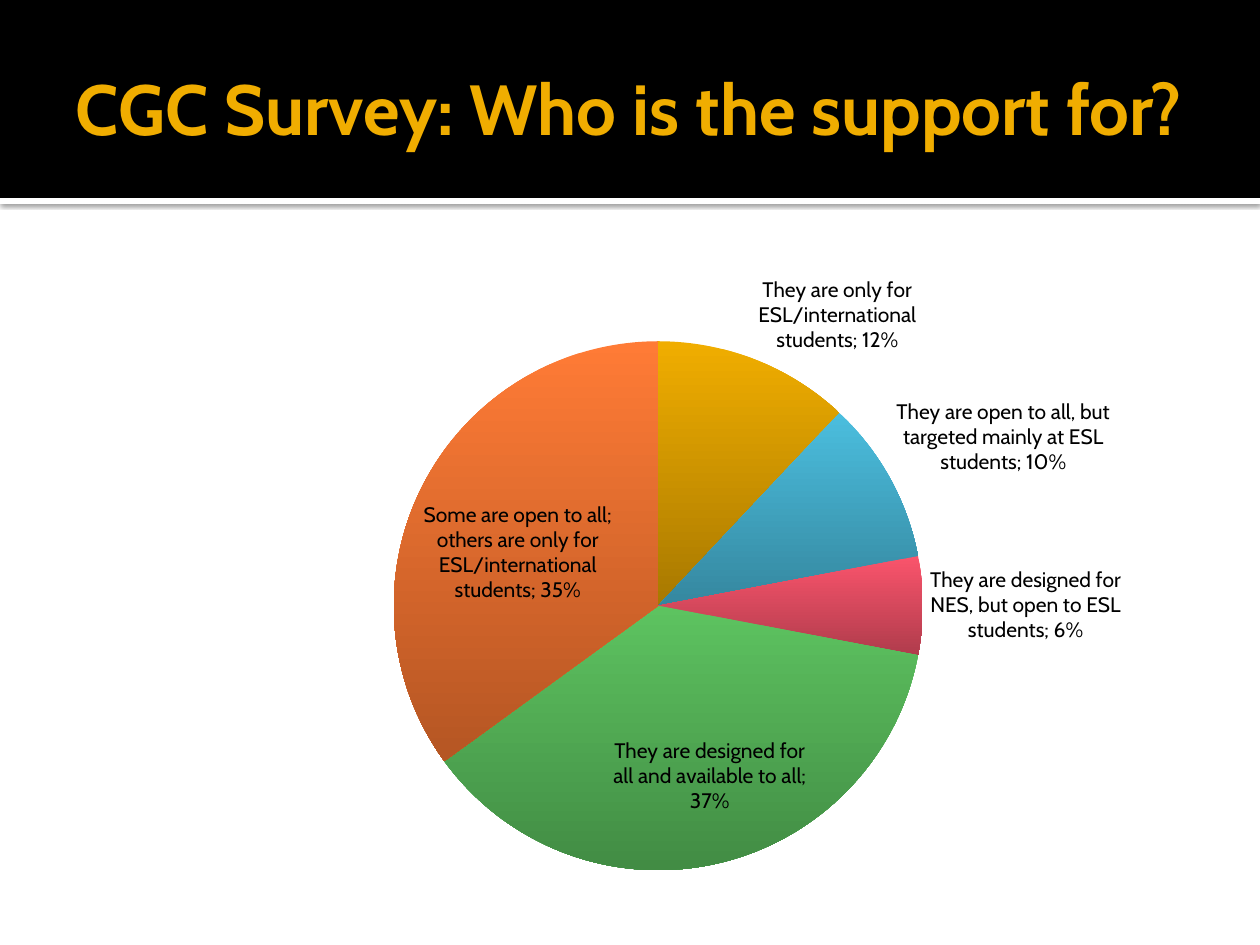
from lxml import etree
from pptx import Presentation
from pptx.chart.data import CategoryChartData
from pptx.dml.color import RGBColor
from pptx.enum.chart import XL_CHART_TYPE, XL_LABEL_POSITION
from pptx.enum.shapes import MSO_SHAPE
from pptx.enum.text import MSO_ANCHOR, MSO_AUTO_SIZE, PP_ALIGN
from pptx.oxml import parse_xml
from pptx.oxml.ns import nsdecls, qn
from pptx.util import Pt

PIE = XL_CHART_TYPE.PIE
OUT, MID = XL_LABEL_POSITION.OUTSIDE_END, XL_LABEL_POSITION.CENTER
RECT = MSO_SHAPE.RECTANGLE
FONT = "Cabin"
SCALE = 914400 / 126

# answer, share, top colour, bottom colour, label place, label shift
SLICES = [
    ("They are only for ESL/international students",
     0.12, "F0AD00", "A87900", OUT, None),
    ("They are open to all, but targeted mainly at ESL students",
     0.10, "4BBEDE", "35879F", OUT, None),
    ("They are designed for NES, but open to ESL students",
     0.06, "FA546C", "B03C4C", OUT, None),
    ("They are designed for all and available to all",
     0.37, "5DC360", "428C44", MID, (0.02, 0.06)),
    ("Some are open to all; others are only for ESL/international students",
     0.35, "FF7B36", "B55623", MID, (-0.02, 0.01)),
]


def px(n):
    return round(n * SCALE)


def rgb(code):
    return RGBColor.from_string(code)


def style(font, size, color, bold=False):
    font.name, font.size, font.bold = FONT, Pt(size), bold
    font.color.rgb = rgb(color)


def add_band(slide, top, height, color):
    band = slide.shapes.add_shape(RECT, 0, px(top), px(1260), px(height))
    band.shadow.inherit = False
    band.fill.solid()
    band.fill.fore_color.rgb = rgb(color)
    band.line.fill.background()
    return band


def cast(shape):
    """Give the shape a soft shadow straight below it."""
    glow = shape._element.spPr.find(qn("a:effectLst"))
    glow.append(parse_xml(
        f'<a:outerShdw {nsdecls("a")} blurRad="{Pt(2.5)}" dist="{Pt(0.8)}" '
        'dir="5400000" algn="tl" rotWithShape="0">'
        '<a:srgbClr val="000000"><a:alpha val="60000"/></a:srgbClr>'
        '</a:outerShdw>'))


def set_title(slide, text):
    title = slide.shapes.title
    title.left, title.top, title.width, title.height = map(
        px, (63, 21, 1134, 173))
    frame = title.text_frame
    frame.text = text
    frame.word_wrap = True
    frame.auto_size = MSO_AUTO_SIZE.NONE
    frame.vertical_anchor = MSO_ANCHOR.MIDDLE
    frame.margin_left = px(12.6)
    frame.margin_right = frame.margin_top = frame.margin_bottom = px(6.3)
    line = frame.paragraphs[0]
    line.alignment = PP_ALIGN.LEFT
    style(line.font, 40.5, "F0AD00", True)
    slide.shapes._spTree.append(title._element)


def layout(spots, inner=False):
    """Make a manual chart layout from a dict of x, y, w and h."""
    node = etree.Element(qn("c:layout"))
    rule = etree.SubElement(node, qn("c:manualLayout"))
    if inner:
        etree.SubElement(rule, qn("c:layoutTarget")).set("val", "inner")
        for axis in "xy":
            etree.SubElement(rule, qn(f"c:{axis}Mode")).set("val", "edge")
    for key, val in spots.items():
        etree.SubElement(rule, qn(f"c:{key}")).set("val", str(val))
    return node


def shade(fill, top, bottom):
    fill.gradient()
    fill.gradient_angle = 270
    for stop, code in zip(fill.gradient_stops, (top, bottom)):
        stop.color.rgb = rgb(code)


def add_labels(series):
    labels = series.data_labels
    style(labels.font, 12, "000000")
    labels.number_format, labels.number_format_is_linked = "0%", False
    labels.show_value = labels.show_category_name = True
    labels.position = OUT
    for i, (*_, place, shift) in enumerate(SLICES):
        if shift:
            label = series.points[i].data_label
            style(label.font, 12, "000000")
            label.position = place
            node = labels._element.xpath(f"c:dLbl[c:idx/@val={i}]")[0]
            node.find(qn("c:idx")).addnext(layout(dict(zip("xy", shift))))
            node.find(qn("c:showCatName")).set("val", "1")
            form = etree.Element(qn("c:numFmt"),
                                 formatCode="0%", sourceLinked="0")
            node.find(qn("c:layout")).addnext(form)
    for flag in list(labels._element.iter(qn("c:showBubbleSize"))):
        gap = etree.Element(qn("c:separator"))
        gap.text = "; "
        flag.addnext(gap)


def add_pie(slide):
    data = CategoryChartData(number_format="0%")
    data.categories = [row[0] for row in SLICES]
    data.add_series("Series 1", [row[1] for row in SLICES])
    chart = slide.shapes.add_chart(
        PIE, *map(px, (63, 252, 1134, 687)), data).chart
    chart.has_legend = chart.has_title = False
    style(chart.font, 10, "000000")
    plot = chart.plots[0]
    plot.vary_by_categories = True
    series = plot.series[0]
    for i, (_, _, top, bottom, *_) in enumerate(SLICES):
        look = series.points[i].format
        shade(look.fill, top, bottom)
        look.line.fill.background()
    add_labels(series)
    area = chart._chartSpace.chart.plotArea
    for old in area.findall(qn("c:layout")):
        area.remove(old)
    area.insert(0, layout({"x": 0.29, "y": 0.13, "w": 0.47, "h": 0.77}, True))


def main():
    deck = Presentation()
    deck.slide_width, deck.slide_height = px(1260), px(945)
    slide = deck.slides.add_slide(deck.slide_layouts[5])
    cast(add_band(slide, 198, 6, "FFFFFF"))
    add_band(slide, 0, 198, "000000")
    set_title(slide, "CGC Survey: Who is the support for?")
    add_pie(slide)
    deck.save("out.pptx")


if __name__ == "__main__":
    main()
